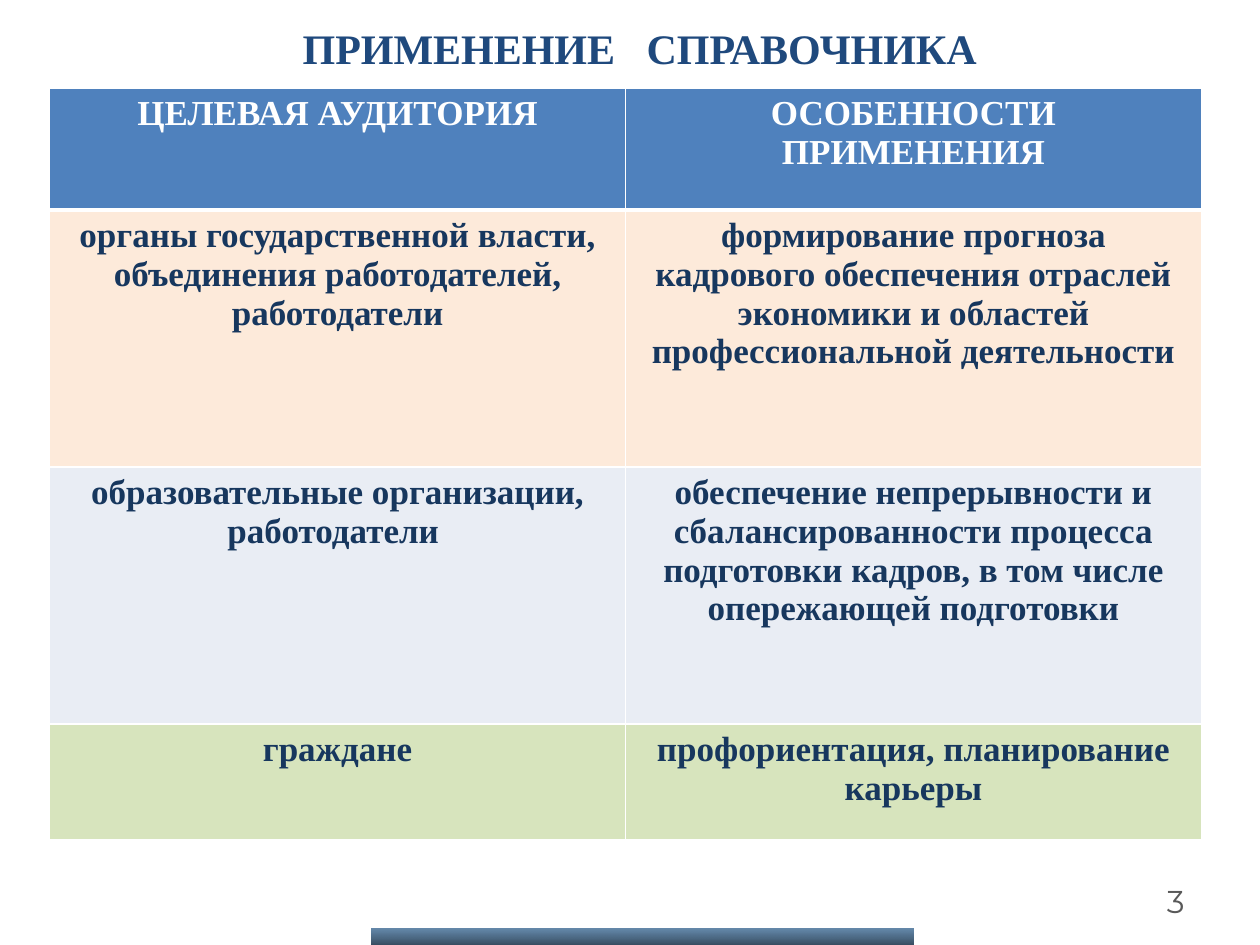
from dataclasses import dataclass

from lxml import etree
from pptx import Presentation
from pptx import util as u
from pptx.dml.color import RGBColor
from pptx.enum import shapes, text
from pptx.oxml import ns


@dataclass(frozen=True)
class Theme:
    title: str = "1F497D"
    header: str = "4F81BD"
    body: str = "17375E"
    white: str = "FFFFFF"
    number: str = "595959"
    bar: tuple = (("003C73", 60), ("001C35", 80))
    serif: str = "Times New Roman"
    sans: str = "Montserrat"
    title_size: int = 24
    table_size: int = 20
    number_size: int = 18


@dataclass(frozen=True)
class Box:
    left: float
    top: float
    width: float
    height: float

    def lengths(self) -> tuple:
        return tuple(u.Cm(n) for n in (self.left, self.top, self.width, self.height))


@dataclass(frozen=True)
class Row:
    audience: str
    usage: str
    height: float
    fill: str
    color: str
    bottom_border: float = 1


THEME = Theme()
TITLE_BOX = Box(3.1, 0.33, 19.6, 1.27)
TABLE_BOX = Box(1, 1.78, 23.22, 15.14)
BAR_BOX = Box(7.5, 18.72, 10.92, 0.33)
NUMBER_BOX = Box(18.2, 17.65, 5.93, 1.02)

ROWS = (
    Row("ЦЕЛЕВАЯ АУДИТОРИЯ", "ОСОБЕННОСТИ ПРИМЕНЕНИЯ",
        2.45, THEME.header, THEME.white, 3),
    Row("органы государственной власти, объединения работодателей, работодатели",
        "формирование прогноза кадрового обеспечения отраслей экономики "
        "и областей профессиональной деятельности",
        5.18, "FDEADA", THEME.body),
    Row("образовательные организации, работодатели ",
        "обеспечение непрерывности и сбалансированности процесса подготовки "
        "кадров, в том числе опережающей подготовки",
        5.18, "E9EDF4", THEME.body),
    Row("граждане", "профориентация, планирование карьеры",
        2.33, "D7E4BD", THEME.body),
)


def write_text(frame, content: str, *, size: float, color: str,
               font: str = THEME.serif, bold: bool = True,
               align=text.PP_ALIGN.CENTER) -> None:
    frame.word_wrap = True
    paragraph = frame.paragraphs[0]
    paragraph.alignment = align
    run = paragraph.add_run()
    run.text = content
    run.font.size = u.Pt(size)
    run.font.name = font
    run.font.bold = bold
    run.font.color.rgb = RGBColor.from_string(color)


def set_borders(cell, widths: dict) -> None:
    properties = cell._tc.get_or_add_tcPr()
    for index, (side, width) in enumerate(widths.items()):
        line = etree.Element(ns.qn(f"a:ln{side}"), w=str(u.Pt(width)))
        fill = etree.SubElement(line, ns.qn("a:solidFill"))
        etree.SubElement(fill, ns.qn("a:srgbClr"), val=THEME.white)
        properties.insert(index, line)


def add_title(slide) -> None:
    title = slide.shapes.title
    title.left, title.top, title.width, title.height = TITLE_BOX.lengths()
    write_text(title.text_frame, "ПРИМЕНЕНИЕ   СПРАВОЧНИКА",
               size=THEME.title_size, color=THEME.title)


def add_audience_table(slide) -> None:
    table = slide.shapes.add_table(len(ROWS), 2, *TABLE_BOX.lengths()).table
    top_border = 1
    for row, table_row in zip(ROWS, table.rows):
        table_row.height = u.Cm(row.height)
        for cell, content in zip(table_row.cells, (row.audience, row.usage)):
            cell.fill.solid()
            cell.fill.fore_color.rgb = RGBColor.from_string(row.fill)
            set_borders(cell, {"L": 1, "R": 1, "T": top_border, "B": row.bottom_border})
            write_text(cell.text_frame, content, size=THEME.table_size, color=row.color)
        top_border = row.bottom_border


def add_bottom_bar(slide) -> None:
    bar = slide.shapes.add_shape(shapes.MSO_SHAPE.RECTANGLE, *BAR_BOX.lengths())
    bar.shadow.inherit = False
    bar.line.fill.background()
    bar.fill.gradient()
    bar.fill.gradient_angle = 270
    for stop, position, (color, _) in zip(bar.fill.gradient_stops, (0, 1), THEME.bar):
        stop.position = position
        stop.color.rgb = RGBColor.from_string(color)
    colors = bar._element.spPr.findall(".//" + ns.qn("a:srgbClr"))
    for element, (_, opacity) in zip(colors, THEME.bar):
        etree.SubElement(element, ns.qn("a:alpha"), val=str(opacity * 1000))


def add_slide_number(slide) -> None:
    frame = slide.shapes.add_textbox(*NUMBER_BOX.lengths()).text_frame
    frame.vertical_anchor = text.MSO_ANCHOR.MIDDLE
    write_text(frame, "3", size=THEME.number_size, color=THEME.number,
               font=THEME.sans, bold=False, align=text.PP_ALIGN.RIGHT)


def main() -> None:
    presentation = Presentation()
    presentation.slide_width = u.Cm(25.4)
    presentation.slide_height = u.Cm(19.05)
    slide = presentation.slides.add_slide(
        presentation.slide_layouts.get_by_name("Title Only"))
    add_title(slide)
    add_audience_table(slide)
    add_bottom_bar(slide)
    add_slide_number(slide)
    presentation.save("out.pptx")


if __name__ == "__main__":
    main()
